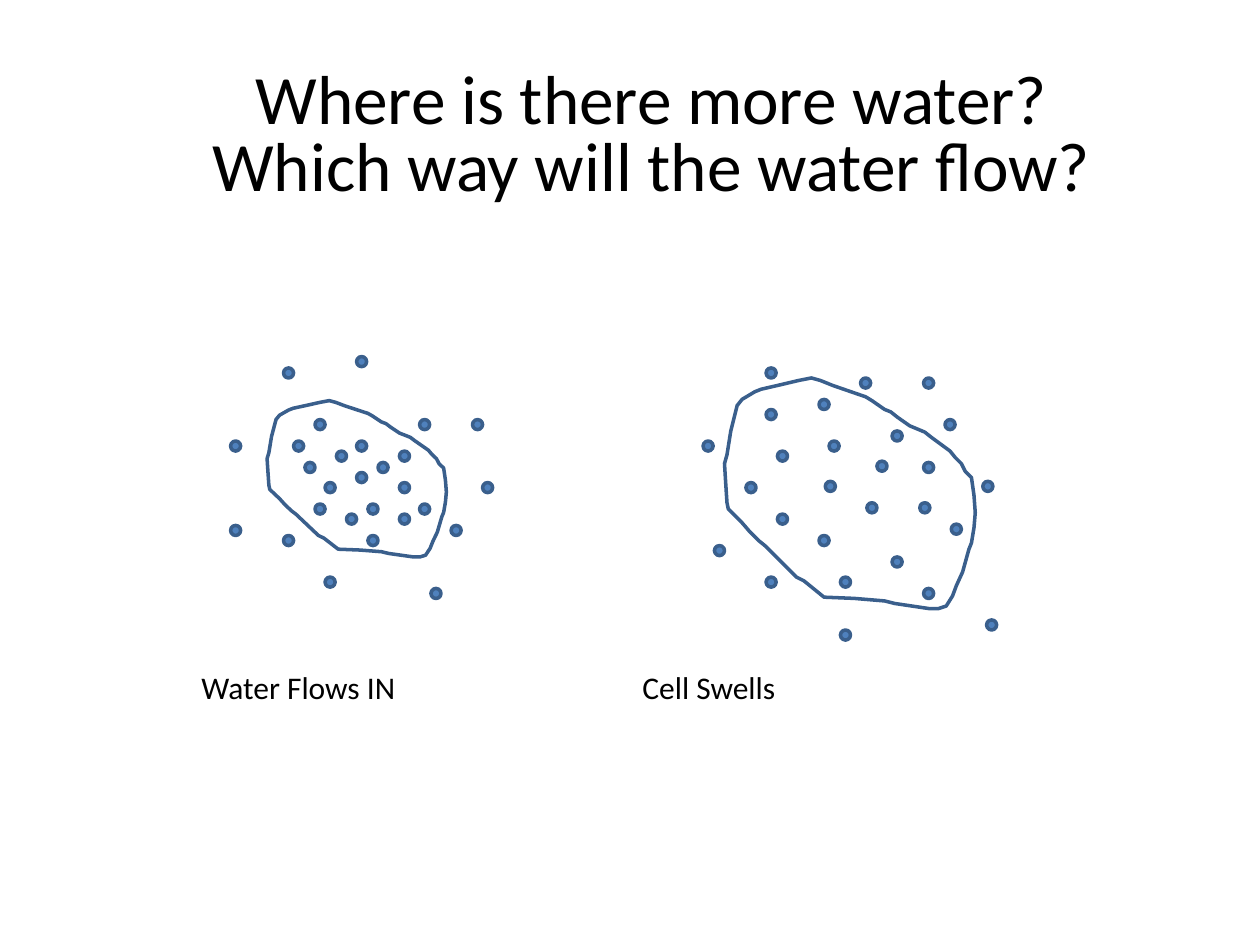
"""Build a slide that compares water around two cells."""
from dataclasses import dataclass

from pptx import Presentation, util as u
from pptx.dml.color import RGBColor
from pptx.enum import shapes, text

PX = 9144
DOT = 8
BLUE = RGBColor(0x4F, 0x81, 0xBD)
NAVY = RGBColor(0x3A, 0x5F, 0x8C)
WHITE = RGBColor(255, 255, 255)
BLACK = RGBColor(0, 0, 0)

BASE = (200, 183)
RIM = [
    (59, 2), (42, 6), (29, 9), (24, 11), (19, 14), (14, 17), (10, 22),
    (5, 42), (2, 61), (0, 68), (1, 84), (2, 99), (3, 104), (14, 115),
    (20, 122), (27, 129), (32, 133), (44, 145), (57, 158), (63, 161),
    (79, 174), (103, 175), (127, 177), (135, 179), (162, 183), (170, 183),
    (176, 181), (181, 173), (184, 165), (189, 154), (194, 136), (196, 131),
    (198, 119), (199, 107), (198, 93), (196, 79), (191, 74), (188, 68),
    (183, 63), (179, 58), (164, 47), (159, 43), (147, 38), (137, 31),
    (132, 27), (127, 25), (117, 18), (112, 15), (86, 6), (81, 4),
    (76, 2), (69, 0),
]


@dataclass
class Cell:
    x: int
    y: int
    w: int
    h: int
    dots: list[tuple[int, int]]


@dataclass
class Label:
    x: int
    y: int
    w: int
    h: int
    lines: list[str]
    size: float


CELLS = [
    Cell(212, 318, 143, 124, [
        (267, 358), (292, 400), (250, 333), (258, 458), (342, 467),
        (233, 350), (275, 408), (358, 417), (183, 417), (242, 367),
        (225, 425), (317, 358), (250, 400), (183, 350), (283, 375),
        (317, 408), (283, 350), (383, 383), (375, 333), (225, 292),
        (317, 383), (333, 333), (283, 283), (258, 383), (292, 425),
        (333, 400), (300, 367),
    ]),
    Cell(575, 300, 200, 183, [
        (650, 317), (688, 399), (658, 350), (667, 500), (783, 492),
        (608, 325), (667, 458), (755, 416), (567, 433), (617, 358),
        (608, 458), (708, 342), (650, 425), (558, 350), (592, 383),
        (733, 467), (617, 408), (780, 382), (750, 333), (608, 292),
        (733, 367), (733, 300), (683, 300), (655, 382), (708, 442),
        (730, 399), (696, 366),
    ]),
]
TITLE = Label(67, 47, 900, 125, ["Where is there more water?",
                                 "Which way will the water flow?"], 39.6)
NOTE = Label(150, 525, 632, 40, ["Water Flows IN\t\t\t\tCell Swells"], 18)


def paint(shape, fill: RGBColor) -> None:
    shape.shadow.inherit = False
    shape.fill.solid()
    shape.fill.fore_color.rgb = fill
    shape.line.color.rgb = NAVY
    shape.line.width = u.Pt(2)


def draw_cell(slide, cell: Cell) -> None:
    scale = (cell.w * PX / BASE[0], cell.h * PX / BASE[1])
    pen = slide.shapes.build_freeform(*RIM[0], scale=scale)
    pen.add_line_segments(RIM[1:], close=True)
    paint(pen.convert_to_shape(cell.x * PX, cell.y * PX), WHITE)
    for x, y in cell.dots:
        dot = slide.shapes.add_shape(shapes.MSO_SHAPE.OVAL, x * PX, y * PX,
                                     DOT * PX, DOT * PX)
        paint(dot, BLUE)


def draw_label(slide, label: Label):
    box = slide.shapes.add_textbox(label.x * PX, label.y * PX,
                                   label.w * PX, label.h * PX)
    para = box.text_frame.paragraphs[0]
    for i, line in enumerate(label.lines):
        if i:
            para.add_line_break()
        run = para.add_run()
        run.text = line
        run.font.name = "Calibri"
        run.font.size = u.Pt(label.size)
        run.font.color.rgb = BLACK
    return box.text_frame


def main() -> None:
    deck = Presentation()
    deck.slide_width, deck.slide_height = 1000 * PX, 750 * PX
    slide = deck.slides.add_slide(deck.slide_layouts[6])
    for cell in CELLS:
        draw_cell(slide, cell)
    title = draw_label(slide, TITLE)
    title.word_wrap = True
    title.vertical_anchor = text.MSO_ANCHOR.MIDDLE
    title.paragraphs[0].alignment = text.PP_ALIGN.CENTER
    title.paragraphs[0].line_spacing = 0.8
    note = draw_label(slide, NOTE)
    note.word_wrap = False
    note.auto_size = text.MSO_AUTO_SIZE.SHAPE_TO_FIT_TEXT
    deck.save("out.pptx")


if __name__ == "__main__":
    main()
